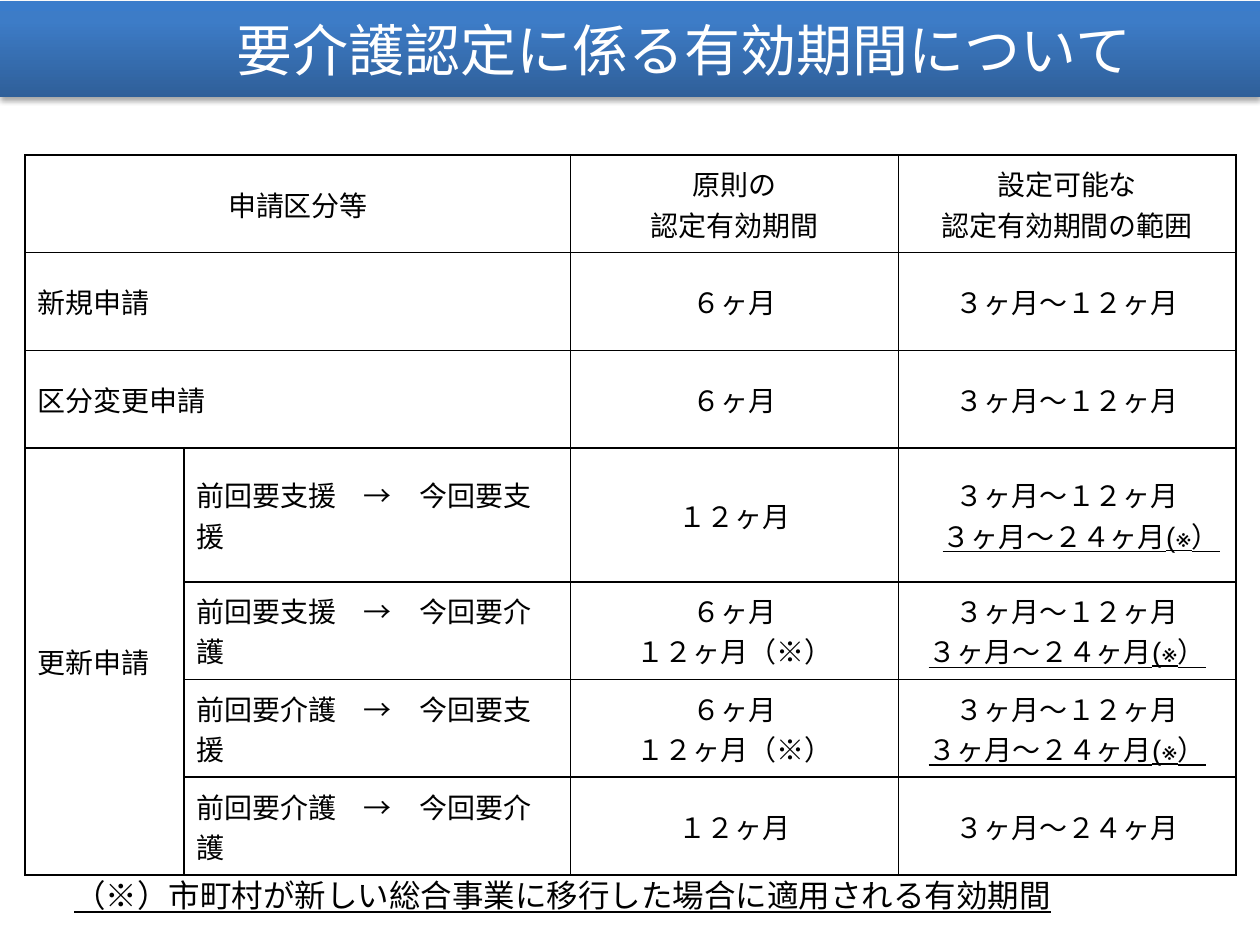
from copy import deepcopy

from lxml import etree
from pptx import Presentation
from pptx import util as u
from pptx.dml.color import RGBColor
from pptx.enum import text as t
from pptx.oxml.ns import qn

LEFT, CENTER = t.PP_ALIGN.LEFT, t.PP_ALIGN.CENTER

# Within a line, the text after "|" is underlined.
SHORT_RANGE = "３ヶ月～１２ヶ月"
LONG_RANGE = "|３ヶ月～２４ヶ月(※）"
HALF_OR_FULL_YEAR = ["６ヶ月", "１２ヶ月（※）"]
ROWS = [
    [["申請区分等"], [], ["原則の", "認定有効期間"], ["設定可能な", "認定有効期間の範囲"]],
    [["新規申請"], [], ["６ヶ月"], [SHORT_RANGE]],
    [["区分変更申請"], [], ["６ヶ月"], [SHORT_RANGE]],
    [["更新申請"], ["前回要支援　→　今回要支援"], ["１２ヶ月"], [SHORT_RANGE, "　" + LONG_RANGE]],
    [[], ["前回要支援　→　今回要介護"], HALF_OR_FULL_YEAR, [SHORT_RANGE, LONG_RANGE]],
    [[], ["前回要介護　→　今回要支援"], HALF_OR_FULL_YEAR, [SHORT_RANGE, LONG_RANGE]],
    [[], ["前回要介護　→　今回要介護"], ["１２ヶ月"], ["３ヶ月～２４ヶ月"]],
]
MERGES = [((0, 0), (0, 1)), ((1, 0), (1, 1)), ((2, 0), (2, 1)), ((3, 0), (6, 0))]
COLUMN_WIDTHS = [1.26, 3.07, 2.6, 2.68]
TITLE_STOPS = [(0, "2F5F99"), (0.8, "3D7CC7"), (1, "3A7CCB")]


def color(value):
    return RGBColor.from_string(value)


def write(frame, lines, size=16, font="Arial", ink="000000", align=LEFT):
    """Fill a text frame with one paragraph per line."""
    for index, line in enumerate(lines):
        para = frame.add_paragraph() if index else frame.paragraphs[0]
        para.alignment = align
        for part, words in enumerate(line.split("|")):
            if words:
                span = para.add_run()
                span.text = words
                span.font.size = u.Pt(size)
                span.font.name = font
                span.font.color.rgb = color(ink)
                span.font.underline = part == 1


def add_borders(cell, ink="000000", width=1):
    properties = cell._tc.get_or_add_tcPr()
    for index, side in enumerate(["lnL", "lnR", "lnT", "lnB"]):
        line = etree.Element(qn(f"a:{side}"), w=str(u.Pt(width)))
        fill = etree.SubElement(line, qn("a:solidFill"))
        etree.SubElement(fill, qn("a:srgbClr"), val=ink)
        properties.insert(index, line)


def add_shadow(shape, ink, opacity, blur, distance):
    """Cast a soft shadow straight down."""
    shape.shadow.inherit = False
    effects = shape._element.spPr.find(qn("a:effectLst"))
    shadow = etree.SubElement(
        effects, qn("a:outerShdw"), blurRad=str(u.Pt(blur)),
        dist=str(u.Pt(distance)), dir="5400000", rotWithShape="0")
    tint = etree.SubElement(shadow, qn("a:srgbClr"), val=ink)
    etree.SubElement(tint, qn("a:alpha"), val=str(opacity * 1000))


class SlideBuilder:
    def __init__(self, deck):
        self.slide = deck.slides.add_slide(deck.slide_layouts[5])

    def title_bar(self, words, left, top, width, height):
        bar = self.slide.shapes.title
        bar.left, bar.top = u.Inches(left), u.Inches(top)
        bar.width, bar.height = u.Inches(width), u.Inches(height)
        bar.fill.gradient()
        bar.fill.gradient_angle = 90
        stop_list = bar._element.spPr.find(qn("a:gradFill")).find(qn("a:gsLst"))
        stop_list.append(deepcopy(stop_list[-1]))
        for stop, (position, ink) in zip(bar.fill.gradient_stops, TITLE_STOPS):
            stop.position = position
            stop.color.rgb = color(ink)
        add_shadow(bar, "000000", opacity=35, blur=3.1, distance=1.8)
        frame = bar.text_frame
        frame.auto_size = t.MSO_AUTO_SIZE.NONE
        frame.vertical_anchor = t.MSO_ANCHOR.MIDDLE
        write(frame, [words], size=32, font="Calibri", ink="FFFFFF")

    def period_table(self, left, top, height):
        table = self.slide.shapes.add_table(
            len(ROWS), len(COLUMN_WIDTHS), u.Inches(left), u.Inches(top),
            u.Inches(sum(COLUMN_WIDTHS)), u.Inches(height)).table
        table.first_row = table.horz_banding = False
        for column, width in zip(table.columns, COLUMN_WIDTHS):
            column.width = u.Inches(width)
        for start, end in MERGES:
            table.cell(*start).merge(table.cell(*end))
        for row, entries in enumerate(ROWS):
            for column, lines in enumerate(entries):
                cell = table.cell(row, column)
                cell.fill.background()
                add_borders(cell)
                cell.vertical_anchor = t.MSO_ANCHOR.MIDDLE
                centered = row == 0 or column >= 2
                write(cell.text_frame, lines, align=CENTER if centered else LEFT)

    def note(self, words, left, top, width, height):
        box = self.slide.shapes.add_textbox(
            u.Inches(left), u.Inches(top), u.Inches(width), u.Inches(height))
        box.text_frame.word_wrap = True
        box.text_frame.auto_size = t.MSO_AUTO_SIZE.SHAPE_TO_FIT_TEXT
        write(box.text_frame, [words], size=18)


def main():
    deck = Presentation()
    deck.slide_width, deck.slide_height = u.Inches(10), u.Inches(7.5)
    builder = SlideBuilder(deck)
    builder.title_bar("　　　　要介護認定に係る有効期間について", 0, 0.01, 10, 0.76)
    builder.period_table(left=0.2, top=1.23, height=5.43)
    builder.note("|（※）市町村が新しい総合事業に移行した場合に適用される有効期間",
                 0.49, 6.9, 9.16, 0.4)
    deck.save("out.pptx")


if __name__ == "__main__":
    main()
